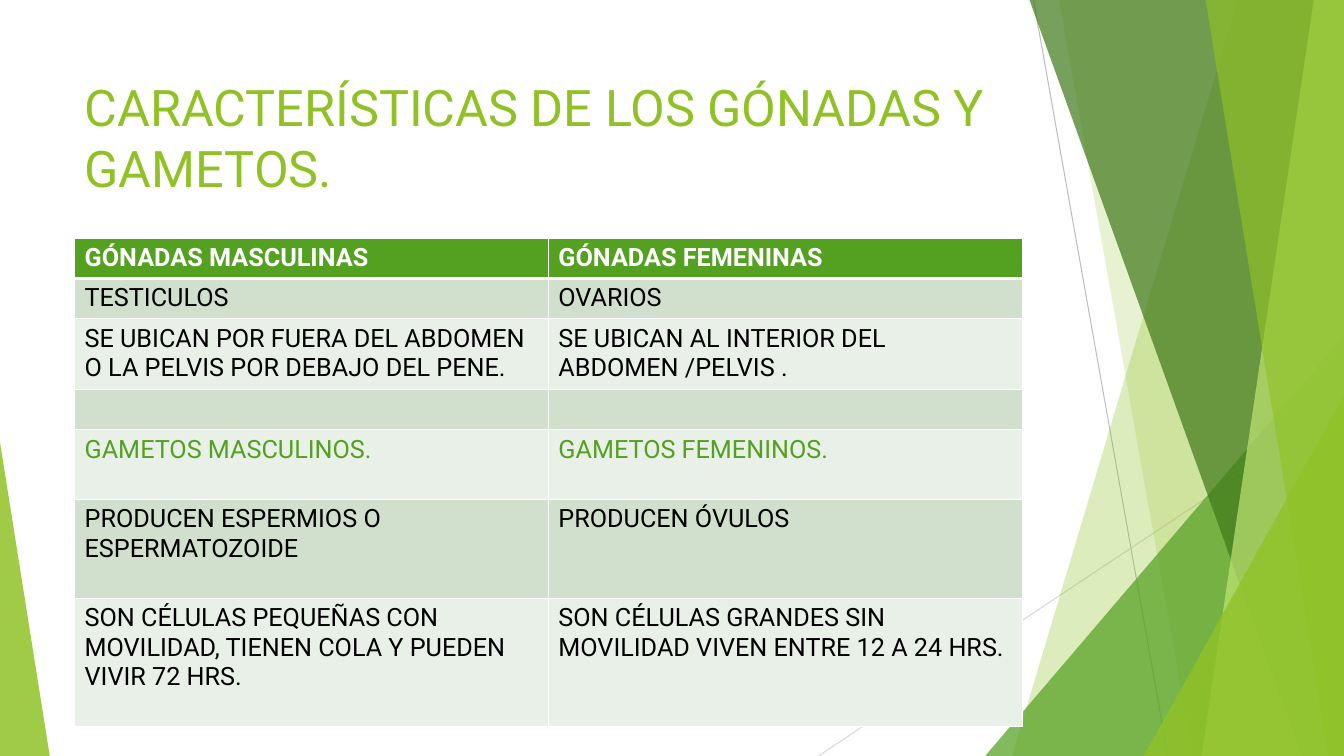
from lxml import etree
from pptx import Presentation
from pptx.dml.color import RGBColor
from pptx.enum.shapes import MSO_CONNECTOR, MSO_SHAPE
from pptx.enum.text import MSO_ANCHOR
from pptx.oxml.ns import qn
from pptx.util import Inches, Pt

STRAIGHT = MSO_CONNECTOR.STRAIGHT
TRIANGLE = MSO_SHAPE.ISOSCELES_TRIANGLE
TOP = MSO_ANCHOR.TOP

WHITE = RGBColor(0xFF, 0xFF, 0xFF)
BLACK = RGBColor(0x00, 0x00, 0x00)
LIME = RGBColor(0x90, 0xC2, 0x26)
PALE_LIME = RGBColor(0xC0, 0xE4, 0x74)
GREEN = RGBColor(0x54, 0xA0, 0x21)
DARK_GREEN = RGBColor(0x3F, 0x78, 0x19)
BAND_DARK = RGBColor(0xD1, 0xDF, 0xCD)
BAND_LIGHT = RGBColor(0xE9, 0xF0, 0xE8)
GRAY = RGBColor(0xBF, 0xBF, 0xBF)
LIGHT_GRAY = RGBColor(0xD9, 0xD9, 0xD9)

# Text lines each row holds, then its two cells
ROWS = [
    (1, "GÓNADAS MASCULINAS", "GÓNADAS FEMENINAS"),
    (1, "TESTICULOS", "OVARIOS"),
    (2, "SE UBICAN POR FUERA DEL ABDOMEN O LA PELVIS POR DEBAJO DEL PENE.",
     "SE UBICAN AL INTERIOR DEL ABDOMEN /PELVIS ."),
    (1, "", ""),
    (2, "GAMETOS MASCULINOS.", "GAMETOS FEMENINOS."),
    (3, "PRODUCEN ESPERMIOS O ESPERMATOZOIDE", "PRODUCEN ÓVULOS"),
    (4, "SON CÉLULAS PEQUEÑAS CON MOVILIDAD, TIENEN COLA Y PUEDEN VIVIR 72 HRS.",
     "SON CÉLULAS GRANDES SIN MOVILIDAD VIVEN ENTRE 12 A 24 HRS."),
]
HEADER_ROW, GAMETES_ROW = 0, 4
LINE_SHARE, PADDING_SHARE = 3.88, 1.45
LEFT, CONTENT_WIDTH = 5.55, 70.5


def write_text(text_frame, text, size=18, color=BLACK, bold=False, font="Roboto"):
    run = text_frame.paragraphs[0].add_run()
    run.text = text
    run.font.name = font
    run.font.size = Pt(size)
    run.font.bold = bold
    run.font.color.rgb = color


def set_cell_border(cell, side, width):
    """Draw one white edge; side is L, R, T or B."""
    properties = cell._tc.get_or_add_tcPr()
    line = etree.SubElement(properties, qn(f"a:ln{side}"), w=str(Pt(width)))
    fill = etree.SubElement(line, qn("a:solidFill"))
    etree.SubElement(fill, qn("a:srgbClr"), val=str(WHITE))


class SlideBuilder:
    """Places elements by percentages of the slide's width and height."""

    def __init__(self, presentation):
        self.width = presentation.slide_width
        self.height = presentation.slide_height
        self.slide = presentation.slides.add_slide(presentation.slide_layouts[6])
        self.shapes = self.slide.shapes

    def across(self, share):
        return round(self.width * share / 100)

    def down(self, share):
        return round(self.height * share / 100)

    def box(self, left, top, width, height):
        return (self.across(left), self.down(top),
                self.across(width), self.down(height))

    def line(self, start, end, color):
        connector = self.shapes.add_connector(
            STRAIGHT, self.across(start[0]), self.down(start[1]),
            self.across(end[0]), self.down(end[1]))
        connector.line.color.rgb = color
        connector.line.width = Pt(0.75)
        etree.SubElement(connector._element.spPr, qn("a:effectLst"))

    def paint(self, shape, color, opacity):
        shape.shadow.inherit = False
        shape.line.fill.background()
        shape.fill.solid()
        shape.fill.fore_color.rgb = color
        color_element = shape._element.spPr.find(".//" + qn("a:srgbClr"))
        etree.SubElement(color_element, qn("a:alpha"), val=str(opacity * 1000))

    def band(self, top_left, bottom_left, color, opacity):
        """Fill from a slanted left edge to the right side of the slide."""
        corners = [(100, 0), (100, 100), (bottom_left, 100)]
        builder = self.shapes.build_freeform(self.across(top_left), 0)
        builder.add_line_segments(
            [(self.across(x), self.down(y)) for x, y in corners], close=True)
        self.paint(builder.convert_to_shape(), color, opacity)

    def corner(self, left, top, width, peak, color, opacity):
        """Triangle standing on the bottom edge; peak is 0 left, 1 right."""
        shape = self.shapes.add_shape(
            TRIANGLE, *self.box(left, top, width, 100 - top))
        shape.adjustments[0] = peak
        self.paint(shape, color, opacity)

    def title(self, text, top, height):
        text_box = self.shapes.add_textbox(
            *self.box(LEFT, top, CONTENT_WIDTH, height))
        frame = text_box.text_frame
        frame.word_wrap = True
        frame.vertical_anchor = TOP
        frame.margin_top = Inches(0.09)
        write_text(frame, text, size=36, color=LIME)

    def table(self, rows, top):
        heights = [PADDING_SHARE + LINE_SHARE * row[0] for row in rows]
        frame = self.shapes.add_table(
            len(rows), 2, *self.box(LEFT, top, CONTENT_WIDTH, sum(heights)))
        table = frame.table
        for index, (_, *texts) in enumerate(rows):
            table.rows[index].height = self.down(heights[index])
            for column, text in enumerate(texts):
                self.fill_cell(table.cell(index, column), index, text)

    def fill_cell(self, cell, row, text):
        is_header = row == HEADER_ROW
        widths = {"L": 1, "R": 1, "T": 3 if row == HEADER_ROW + 1 else 1,
                  "B": 3 if is_header else 1}
        for side, width in widths.items():
            set_cell_border(cell, side, width)
        cell.fill.solid()
        band_color = BAND_DARK if row % 2 else BAND_LIGHT
        cell.fill.fore_color.rgb = GREEN if is_header else band_color
        if text:
            color = {HEADER_ROW: WHITE, GAMETES_ROW: GREEN}.get(row, BLACK)
            write_text(cell.text_frame, text, color=color, bold=is_header)


def main():
    presentation = Presentation()
    presentation.slide_width = Inches(13.33)
    presentation.slide_height = Inches(7.5)
    builder = SlideBuilder(presentation)

    builder.line((76.9, 0), (86.9, 100), GRAY)
    builder.line((100, 53.75), (60.9, 100), LIGHT_GRAY)
    builder.band(92.1, 75.3, LIME, 30)
    builder.band(78.8, 88.75, LIME, 20)
    builder.corner(73.3, 44.4, 26.7, 1, GREEN, 72)
    builder.band(76.6, 96.85, DARK_GREEN, 70)
    builder.band(97.75, 89.4, PALE_LIME, 70)
    builder.band(89.7, 98.85, LIME, 65)
    builder.corner(85.1, 52.4, 14.9, 1, LIME, 80)
    builder.corner(0, 58.5, 3.7, 0, LIME, 85)

    builder.title("CARACTERÍSTICAS DE LOS GÓNADAS Y GAMETOS.", 8.93, 19.2)
    builder.table(ROWS, 31.5)
    presentation.save("out.pptx")


if __name__ == "__main__":
    main()
